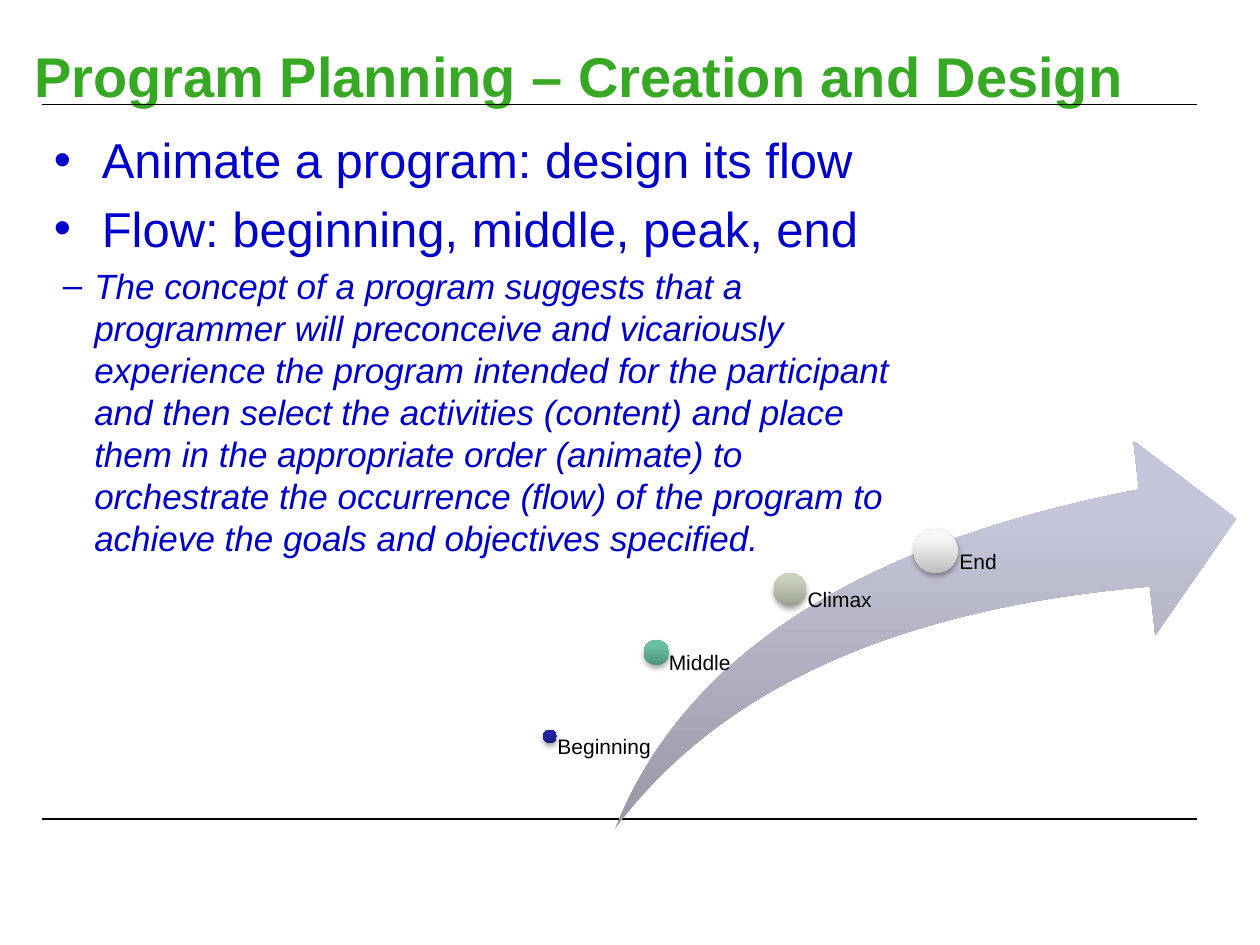
from dataclasses import dataclass

from lxml.etree import SubElement
from pptx import Presentation
from pptx.dml.color import RGBColor
from pptx.enum.shapes import MSO_CONNECTOR, MSO_SHAPE
from pptx.enum.text import MSO_ANCHOR, PP_ALIGN
from pptx.oxml import parse_xml
from pptx.oxml.ns import nsdecls, qn
from pptx.util import Inches, Pt


@dataclass(frozen=True)
class Theme:
    font: str = "Arial"
    title: str = "37A824"
    body: str = "0000CC"
    ink: str = "000000"
    arrow: tuple = ("9898A7", "C5C5D9", "C6C6DA")
    title_size: int = 32
    bullet_size: int = 28
    detail_size: int = 20
    label_size: int = 12


THEME = Theme()

BULLETS = ["Animate a program: design its flow", "Flow: beginning, middle, peak, end"]
CONCEPT = (
    "The concept of a program suggests that a programmer will preconceive and "
    "vicariously experience the program intended for the participant and then select "
    "the activities (content) and place them in the appropriate order (animate) to "
    "orchestrate the occurrence (flow) of the program to achieve the goals and "
    "objectives specified."
)
ARROW_BOTTOM = 6.58
# name, left, top, diameter, gradient, label width, label inset
STAGES = [
    ("Beginning", 4.31, 5.79, 0.11, ("1B1B7E", "2323A3", "2020A6"), 0.84, 0.06),
    ("Middle", 5.11, 5.08, 0.2, ("51937D", "69BFA3", "68C2A4"), 1.04, 0.1),
    ("Climax", 6.14, 4.55, 0.26, ("9BA090", "C9D0BB", "CAD2BB"), 1.04, 0.14),
    ("End", 7.25, 4.2, 0.35, ("BEBEBE", "F7F7F7", "F8F8F8"), 1.04, 0.19),
]


def style_text(paragraph, size, color, bold=False, italic=False):
    for run in paragraph.runs:
        font = run.font
        font.name, font.size = THEME.font, Pt(size)
        font.bold, font.italic = bold, italic
        font.color.rgb = RGBColor.from_string(color)


def set_insets(frame, left=0.1, top=0.05, right=0.1, bottom=0.05):
    frame.margin_left, frame.margin_top = Inches(left), Inches(top)
    frame.margin_right, frame.margin_bottom = Inches(right), Inches(bottom)


def add_title(slide, text):
    title = slide.shapes.title
    title.left, title.top = Inches(0.17), Inches(0.33)
    title.width, title.height = Inches(9.83), Inches(1)
    frame = title.text_frame
    frame.text = text
    frame.vertical_anchor = MSO_ANCHOR.TOP
    set_insets(frame, top=0)
    heading = frame.paragraphs[0]
    heading.alignment = PP_ALIGN.LEFT
    style_text(heading, THEME.title_size, THEME.title, bold=True)


def add_rule(slide, y):
    rule = slide.shapes.add_connector(
        MSO_CONNECTOR.STRAIGHT, Inches(0.33), Inches(y), Inches(9.5), Inches(y))
    rule.line.color.rgb = RGBColor.from_string(THEME.ink)
    rule.line.width = Pt(0.75)
    SubElement(rule._element.spPr, qn("a:effectLst"))


def set_bullet(paragraph, mark, indent, hanging):
    properties = paragraph._p.get_or_add_pPr()
    properties.set("marL", str(Inches(indent)))
    properties.set("indent", str(-Inches(hanging)))
    SubElement(properties, qn("a:buFont")).set("typeface", THEME.font)
    SubElement(properties, qn("a:buChar")).set("char", mark)


def add_body(slide):
    body = slide.shapes.add_textbox(Inches(0.33), Inches(0.83), Inches(7), Inches(4.92))
    frame = body.text_frame
    frame.word_wrap = True
    set_insets(frame, top=0.2)
    frame.text = "\n".join([*BULLETS, CONCEPT])
    *bullets, concept = frame.paragraphs
    for bullet in bullets:
        set_bullet(bullet, "•", 0.38, 0.38)
        style_text(bullet, THEME.bullet_size, THEME.body)
    set_bullet(concept, "–", 0.32, 0.25)
    style_text(concept, THEME.detail_size, THEME.body, italic=True)
    for paragraph, size in zip(frame.paragraphs[1:], (THEME.bullet_size, THEME.detail_size)):
        paragraph.space_before = Pt(0.2 * size)


def add_gradient_shape(slide, preset, left, top, width, height, colors):
    """Add a shape without outline, shaded from bottom to top."""
    shape = slide.shapes.add_shape(
        preset, Inches(left), Inches(top), Inches(width), Inches(height))
    shape.shadow.inherit = False
    shape.line.fill.background()
    stops = "".join(
        f'<a:gs pos="{position}"><a:srgbClr val="{color}"/></a:gs>'
        for position, color in zip((0, 80000, 100000), colors))
    shape._element.spPr.find(qn("a:prstGeom")).addnext(parse_xml(
        f'<a:gradFill {nsdecls("a")} rotWithShape="1"><a:gsLst>{stops}</a:gsLst>'
        '<a:lin ang="16200000" scaled="0"/></a:gradFill>'))
    return shape


def add_drop_shadow(shape):
    effects = shape._element.spPr.find(qn("a:effectLst"))
    effects.append(parse_xml(
        f'<a:outerShdw {nsdecls("a")} blurRad="{Pt(3.1)}" dist="{Pt(1.8)}" dir="5400000" '
        f'rotWithShape="0"><a:srgbClr val="{THEME.ink}"><a:alpha val="35000"/></a:srgbClr>'
        '</a:outerShdw>'))


def add_stage(slide, name, left, top, diameter, colors, label_width, inset):
    """Add a ball and its label, whose box starts at the centre of the ball."""
    ball = add_gradient_shape(slide, MSO_SHAPE.OVAL, left, top, diameter, diameter, colors)
    add_drop_shadow(ball)
    center_x, center_y = left + diameter / 2, top + diameter / 2
    label = slide.shapes.add_textbox(
        Inches(center_x), Inches(center_y),
        Inches(label_width), Inches(ARROW_BOTTOM - center_y))
    frame = label.text_frame
    frame.word_wrap = True
    set_insets(frame, inset, 0, 0, 0)
    frame.text = name
    frame.paragraphs[0].line_spacing = 0.9
    style_text(frame.paragraphs[0], THEME.label_size, THEME.ink)


def main():
    presentation = Presentation()
    presentation.slide_width, presentation.slide_height = Inches(10), Inches(7.5)
    slide = presentation.slides.add_slide(presentation.slide_layouts[5])
    for y in (6.5, 0.83):
        add_rule(slide, y)
    add_title(slide, "Program Planning – Creation and Design")
    add_body(slide)
    arrow = add_gradient_shape(
        slide, MSO_SHAPE.SWOOSH_ARROW, 4.88, 3.5, 4.93, ARROW_BOTTOM - 3.5, THEME.arrow)
    arrow.adjustments[0] = arrow.adjustments[1] = 0.25
    for stage in STAGES:
        add_stage(slide, *stage)
    presentation.save("out.pptx")


if __name__ == "__main__":
    main()
